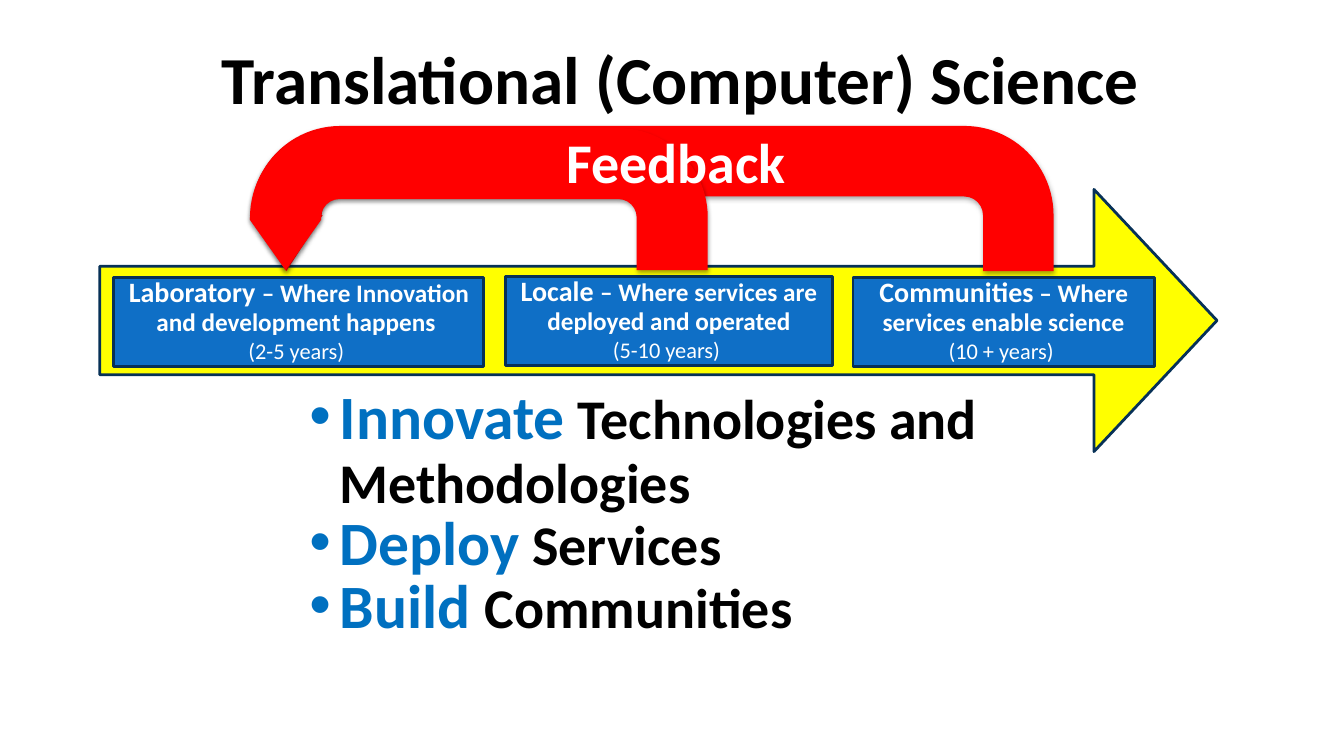
from collections import namedtuple

from lxml import etree
from pptx import Presentation
from pptx.dml.color import RGBColor
from pptx.enum.shapes import MSO_SHAPE
from pptx.enum.text import MSO_ANCHOR, MSO_AUTO_SIZE, PP_ALIGN
from pptx.oxml.ns import qn
from pptx.util import Inches, Pt

RECTANGLE = MSO_SHAPE.RECTANGLE
RIGHT_ARROW = MSO_SHAPE.RIGHT_ARROW
U_TURN_ARROW = MSO_SHAPE.U_TURN_ARROW
LEFT, CENTER = PP_ALIGN.LEFT, PP_ALIGN.CENTER
TOP, MIDDLE = MSO_ANCHOR.TOP, MSO_ANCHOR.MIDDLE
NO_AUTOFIT = MSO_AUTO_SIZE.NONE

FONT = "Calibri"
BLACK, WHITE, RED, YELLOW = "000000", "FFFFFF", "FF0000", "FFFF00"
NAVY, BLUE, ACCENT = "073157", "0F6FC6", "0070C0"

Box = namedtuple("Box", "left top width height")

STAGES = [
    (0.14, 0.87, 3.67, "Laboratory ", "– Where Innovation and development happens ", "(2-5 years) "),
    (4.02, 0.86, 3.25, "Locale ", "– Where services are deployed and operated", "(5-10 years) "),
    (7.47, 0.87, 2.99, "Communities", " – Where services enable science", "(10 + years) "),
]
STAGE_HEIGHT = 0.89
FEEDBACK_ARROWS = [
    (1.49, -0.63, 7.97, 1.44, (0.486, 0.25, 0.385, 0.629, 1)),
    (1.49, -0.61, 4.54, 1.41, (0.5, 0.25, 0.353, 0.629, 1)),
]
GOALS = [
    ("Innovate", " Technologies and Methodologies"),
    ("Deploy", " Services"),
    ("Build ", "Communities"),
]


def color(value):
    return RGBColor.from_string(value)


def inches(box):
    return [Inches(length) for length in box]


def inside(box, left, top, width, height):
    return Box(box.left + left, box.top + top, width, height)


def add_span(para, text, size, fill, bold=True):
    span = para.add_run()
    span.text = text
    span.font.name = FONT
    span.font.size = Pt(size)
    span.font.bold = bold
    span.font.color.rgb = color(fill)


def add_preset(page, preset, box, fill, line=None, adjustments=()):
    shape = page.shapes.add_shape(preset, *inches(box))
    shape.shadow.inherit = False
    shape.fill.solid()
    shape.fill.fore_color.rgb = color(fill)
    if line:
        shape.line.color.rgb = color(line)
        shape.line.width = Pt(2)
    else:
        shape.line.fill.background()
    for index, value in enumerate(adjustments):
        shape.adjustments[index] = value
    return shape


def add_text_box(page, box):
    frame = page.shapes.add_textbox(*inches(box)).text_frame
    frame.word_wrap = True
    return frame


def next_para(frame, index):
    return frame.add_paragraph() if index else frame.paragraphs[0]


def add_title(page, box):
    title = page.shapes.title
    title.left, title.top, title.width, title.height = inches(box)
    frame = title.text_frame
    frame.auto_size = NO_AUTOFIT
    frame.word_wrap = False
    frame.vertical_anchor = TOP
    para = frame.paragraphs[0]
    para.alignment = LEFT
    add_span(para, "Translational (Computer) Science", 48, BLACK)


def add_stage(page, box, name, purpose, duration):
    frame = add_preset(page, RECTANGLE, box, BLUE, NAVY).text_frame
    frame.word_wrap = True
    frame.vertical_anchor = MIDDLE
    lines = [[(name, 20, True), (purpose, 18, True)], [(duration, 16, False)]]
    for index, spans in enumerate(lines):
        para = next_para(frame, index)
        para.alignment = CENTER
        para.line_spacing = Pt(20)
        for text, size, bold in spans:
            add_span(para, text, size, WHITE, bold)


def add_feedback_arrow(page, box, adjustments):
    arrow = add_preset(page, U_TURN_ARROW, box, RED, adjustments=adjustments)
    properties = arrow.element.spPr
    properties.find(qn("a:xfrm")).set("flipH", "1")
    effects = properties.find(qn("a:effectLst"))
    shadow = etree.SubElement(
        effects, qn("a:outerShdw"), blurRad=str(Pt(3.1)), dist=str(Pt(1.8)),
        dir="5400000", rotWithShape="0")
    tint = etree.SubElement(shadow, qn("a:srgbClr"), val=BLACK)
    etree.SubElement(tint, qn("a:alpha"), val="35000")


def add_pipeline(page, box):
    add_preset(page, RIGHT_ARROW, box, YELLOW, NAVY, (0.414, 0.469))
    for left, top, width, *texts in STAGES:
        add_stage(page, inside(box, left, top, width, STAGE_HEIGHT), *texts)
    for left, top, width, height, adjustments in FEEDBACK_ARROWS:
        add_feedback_arrow(page, inside(box, left, top, width, height), adjustments)
    label = add_text_box(page, inside(box, 4.53, -0.66, 2.73, 0.77))
    add_span(label.paragraphs[0], "Feedback", 40, WHITE)


def add_goals(page, box):
    frame = add_text_box(page, box)
    for index, (verb, target) in enumerate(GOALS):
        para = next_para(frame, index)
        properties = para._p.get_or_add_pPr()
        properties.set("marL", str(Inches(0.3)))
        properties.set("indent", str(Inches(-0.3)))
        etree.SubElement(properties, qn("a:buFont"), typeface="Arial")
        etree.SubElement(properties, qn("a:buChar"), char="•")
        para.line_spacing = Pt(45)
        add_span(para, verb, 44, ACCENT)
        add_span(para, target, 40, BLACK)


def main():
    deck = Presentation()
    deck.slide_width, deck.slide_height = Inches(13.33), Inches(7.5)
    page = deck.slides.add_slide(deck.slide_layouts[5])
    add_pipeline(page, Box(0.99, 1.88, 11.08, 2.6))
    add_title(page, Box(2.1, 0.32, 9.48, 0.91))
    add_goals(page, Box(2.97, 3.81, 9.98, 2.63))
    deck.save("out.pptx")


if __name__ == "__main__":
    main()
